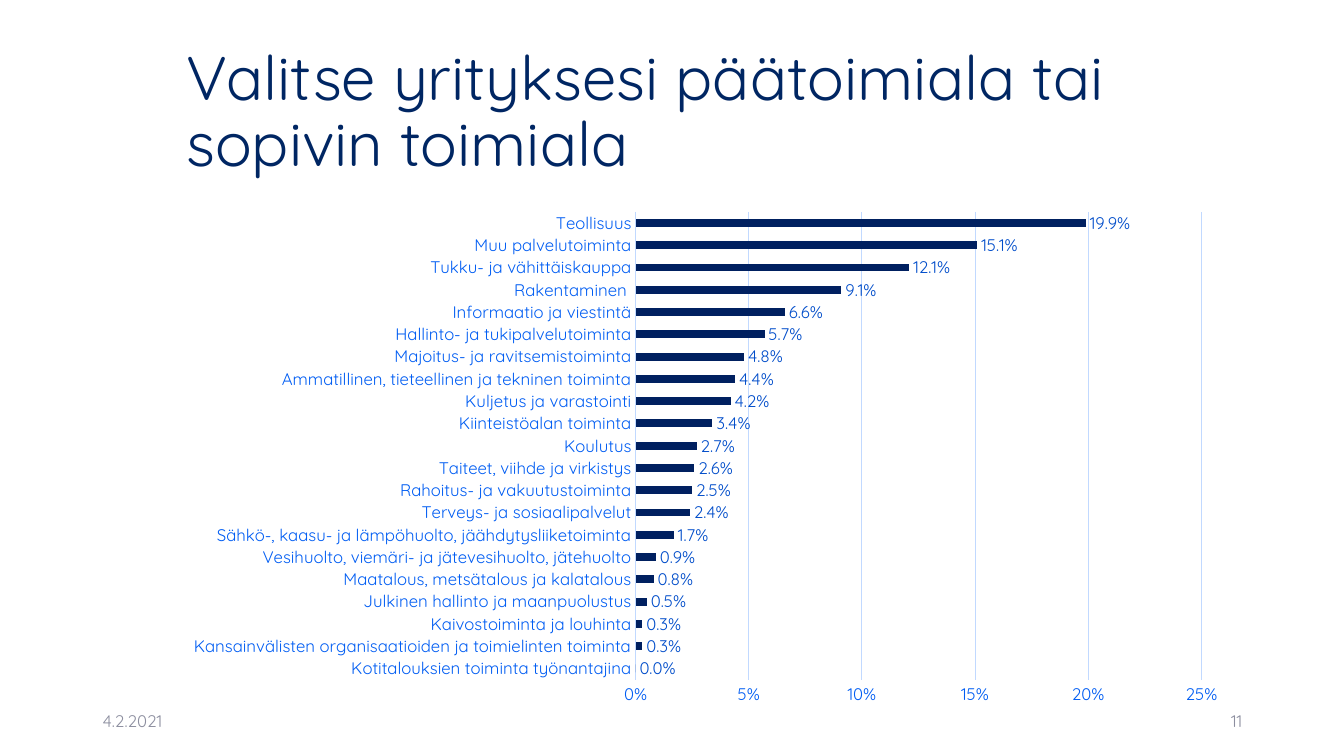
from lxml.etree import SubElement
from pptx import Presentation
from pptx.chart.data import CategoryChartData
from pptx.dml.color import RGBColor
from pptx.enum.chart import XL_CHART_TYPE, XL_LABEL_POSITION, XL_TICK_MARK
from pptx.enum.text import MSO_ANCHOR, PP_ALIGN
from pptx.oxml.ns import qn
from pptx.util import Inches, Pt

FONT = "Quicksand"
NAVY, GREY, BLUE, PALE = "002663", "8C8E9F", "005DF3", "C1D9FF"


def color(hex_string):
    return RGBColor.from_string(hex_string)


def set_font(font, size, hex_string):
    for name, value in {"name": FONT, "size": Pt(size), "bold": False}.items():
        setattr(font, name, value)
    font.color.rgb = color(hex_string)


presentation = Presentation()
presentation.slide_width = Inches(13.33)
presentation.slide_height = Inches(7.5)
slide = presentation.slides.add_slide(presentation.slide_layouts[6])

# Title, date and slide number
texts = [
    ("Valitse yrityksesi päätoimiala tai sopivin toimiala",
     (1.75, 0.4, 10.59, 1.45), 44, NAVY, {"line_spacing": 0.9}),
    ("4.2.2021", (0.92, 6.95, 3, 0.4), 12, GREY, {}),
    ("11", (9.42, 6.95, 3, 0.4), 12, GREY, {"alignment": PP_ALIGN.RIGHT}),
]
for text, box, size, hex_string, formats in texts:
    frame = slide.shapes.add_textbox(*map(Inches, box)).text_frame
    frame.word_wrap = True
    frame.vertical_anchor = MSO_ANCHOR.MIDDLE
    paragraph = frame.paragraphs[0]
    paragraph.text = text
    for name, value in formats.items():
        setattr(paragraph, name, value)
    set_font(paragraph.runs[0].font, size, hex_string)

# Share of answers by industry, from the bottom bar up
shares = {
    "Kotitalouksien toiminta työnantajina": 0,
    "Kansainvälisten organisaatioiden ja toimielinten toiminta": 0.003,
    "Kaivostoiminta ja louhinta": 0.003,
    "Julkinen hallinto ja maanpuolustus": 0.005,
    "Maatalous, metsätalous ja kalatalous": 0.008,
    "Vesihuolto, viemäri- ja jätevesihuolto, jätehuolto": 0.009,
    "Sähkö-, kaasu- ja lämpöhuolto, jäähdytysliiketoiminta": 0.017,
    "Terveys- ja sosiaalipalvelut": 0.024,
    "Rahoitus- ja vakuutustoiminta": 0.025,
    "Taiteet, viihde ja virkistys": 0.026,
    "Koulutus": 0.027,
    "Kiinteistöalan toiminta": 0.034,
    "Kuljetus ja varastointi": 0.042,
    "Ammatillinen, tieteellinen ja tekninen toiminta": 0.044,
    "Majoitus- ja ravitsemistoiminta": 0.048,
    "Hallinto- ja tukipalvelutoiminta": 0.057,
    "Informaatio ja viestintä": 0.066,
    "Rakentaminen ": 0.091,
    "Tukku- ja vähittäiskauppa": 0.121,
    "Muu palvelutoiminta": 0.151,
    "Teollisuus": 0.199,
}
chart_data = CategoryChartData(number_format="0.0%")
chart_data.categories = list(shares)
chart_data.add_series("Series 1", list(shares.values()))
chart = slide.shapes.add_chart(
    XL_CHART_TYPE.BAR_CLUSTERED, Inches(1.75), Inches(2),
    Inches(10.59), Inches(5.1), chart_data).chart
chart.has_legend = False
chart.has_title = False
set_font(chart.font, 10, NAVY)

# Bars and their labels
plot = chart.plots[0]
plot.gap_width = 182
plot.vary_by_categories = False
fill = plot.series[0].format.fill
fill.solid()
fill.fore_color.rgb = color("002060")
plot.has_data_labels = True
labels = plot.data_labels
label_formats = {
    "show_value": True,
    "position": XL_LABEL_POSITION.OUTSIDE_END,
    "number_format": "0.0%",
    "number_format_is_linked": False,
}
for name, value in label_formats.items():
    setattr(labels, name, value)
set_font(labels.font, 12, "004DCA")

# Axes and gridlines
category_axis, value_axis = chart.category_axis, chart.value_axis
for axis in (category_axis, value_axis):
    axis.major_tick_mark = XL_TICK_MARK.NONE
    axis.minor_tick_mark = XL_TICK_MARK.NONE
    set_font(axis.tick_labels.font, 12, BLUE)
value_formats = {
    "minimum_scale": 0,
    "maximum_scale": 0.25,
    "major_unit": 0.05,
    "has_major_gridlines": True,
}
for name, value in value_formats.items():
    setattr(value_axis, name, value)
value_axis.tick_labels.number_format = "0%"
value_axis.tick_labels.number_format_is_linked = False
value_axis.format.line.fill.background()
for line in (category_axis.format.line, value_axis.major_gridlines.format.line):
    line.color.rgb = color(PALE)
    line.width = Pt(0.75)

# Fixed plot area, leaving room for the long category names
plot_area = chart.element.find(".//" + qn("c:plotArea"))
for layout in plot_area.findall(qn("c:layout")):
    plot_area.remove(layout)
layout = SubElement(plot_area, qn("c:layout"))
plot_area.insert(0, layout)
manual_layout = SubElement(layout, qn("c:manualLayout"))
layout_values = {
    "layoutTarget": "inner", "xMode": "edge", "yMode": "edge",
    "x": "0.43", "y": "0.02", "w": "0.53", "h": "0.91",
}
for tag, value in layout_values.items():
    SubElement(manual_layout, qn("c:" + tag)).set("val", value)

presentation.save("out.pptx")
